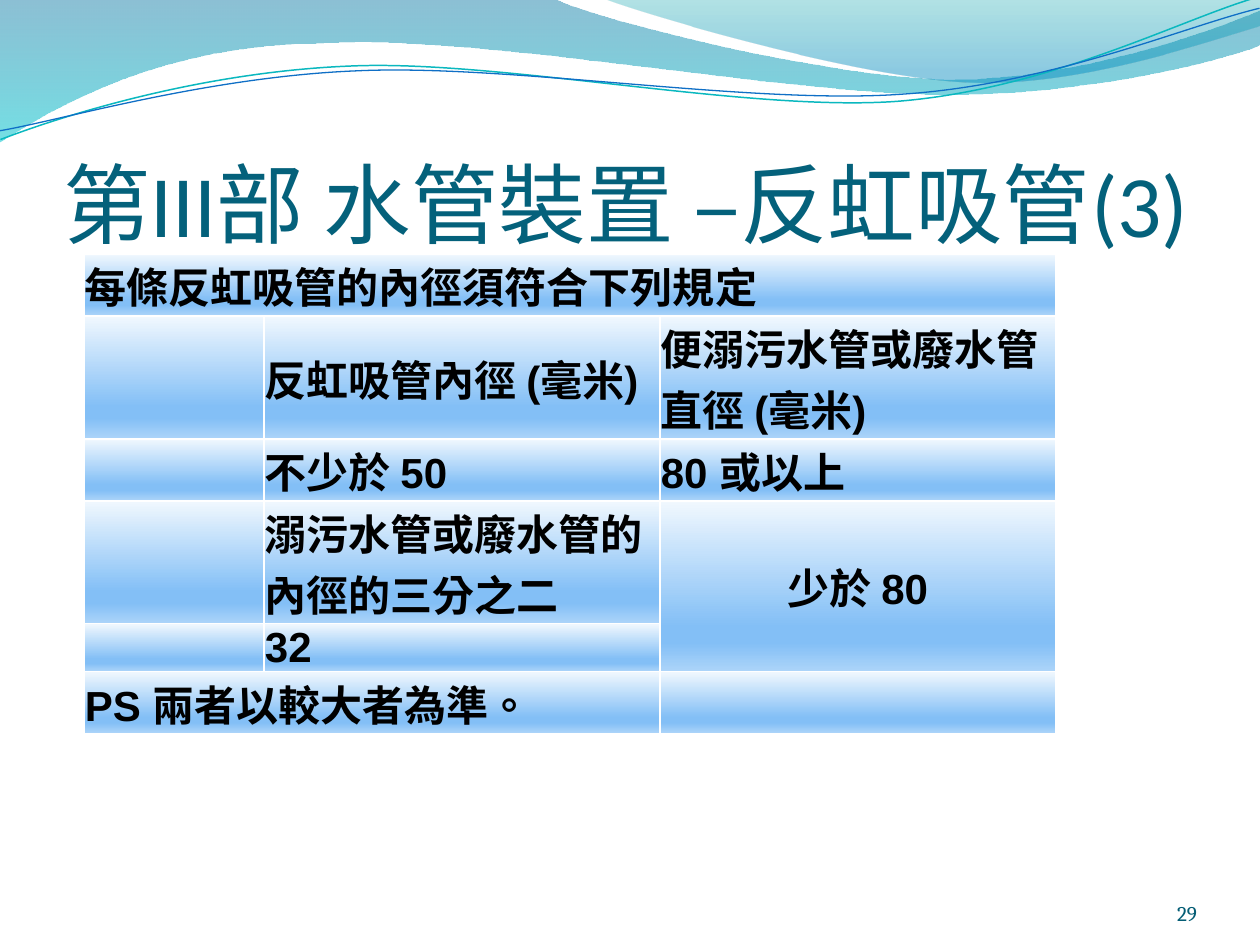
from lxml import etree
from pptx import Presentation, util as u
from pptx.dml.color import RGBColor
from pptx.enum import lang, text
from pptx.oxml import ns

PX = 914400 // 126  # EMU in one px
WHITE = RGBColor(0xFF, 0xFF, 0xFF)
BLACK = RGBColor(0, 0, 0)
TITLE_BLUE = RGBColor(0x04, 0x61, 0x7B)
NUMBER_BLUE = RGBColor(0x04, 0x5D, 0x75)
TEAL = RGBColor(0x0A, 0xB8, 0xBF)
BLUE = RGBColor(0x0F, 0x6F, 0xC6)
DEEP_BLUE = RGBColor(0x00, 0x74, 0xA1)
AQUA = RGBColor(0x00, 0xC6, 0xCF)
SEA_GREEN = RGBColor(0x00, 0xA1, 0xA9)
SEA_BLUE = RGBColor(0x00, 0x8B, 0xBF)
CELL_LIGHT = RGBColor(0xF1, 0xF8, 0xFE)
CELL_MID = RGBColor(0x83, 0xBF, 0xF6)
CELL_END = RGBColor(0xAC, 0xD4, 0xF9)


def add_gradient(parent, stops):
    """Add a top-to-bottom gradient; a stop is (position %, colour, opacity %)."""
    gradient = etree.SubElement(parent, ns.qn("a:gradFill"))
    stop_list = etree.SubElement(gradient, ns.qn("a:gsLst"))
    for position, colour, opacity in stops:
        stop = etree.SubElement(stop_list, ns.qn("a:gs"), pos=str(position * 1000))
        tint = etree.SubElement(stop, ns.qn("a:srgbClr"), val=str(colour))
        if opacity < 100:
            etree.SubElement(tint, ns.qn("a:alpha"), val=str(opacity * 1000))
    etree.SubElement(gradient, ns.qn("a:lin"), ang="5400000", scaled="0")


def add_outline(page, start, segments, close):
    """Draw segments of one point (straight) or three points (cubic curve)."""
    builder = page.shapes.build_freeform(start[0] * PX, start[1] * PX)
    builder.add_line_segments([(x * PX, y * PX) for segment in segments for x, y in segment],
                              close=close)
    shape = builder.convert_to_shape()
    shape.shadow.inherit = False
    # Join each three straight steps of a curve into one cubic step
    steps = iter(list(shape._element.spPr.iter(ns.qn("a:lnTo"))))
    for segment in segments:
        parts = [next(steps) for _ in segment]
        if len(parts) == 3:
            cubic = etree.Element(ns.qn("a:cubicBezTo"))
            parts[0].addprevious(cubic)
            for part in parts:
                cubic.append(part[0])
                part.getparent().remove(part)
    return shape


deck = Presentation()
deck.slide_width, deck.slide_height = u.Inches(10), u.Inches(7.5)
page = deck.slides.add_slide(deck.slide_layouts[5])

# Wave bands across the top
waves = [
    ((0, -1), [
        ((554, -1),),
        ((600, 21), (837, 79), (955, 79)),
        ((1075, 79), (1207, 33), (1260, 11)),
        ((1261, 45),),
        ((1239, 55), (1096, 96), (940, 94)),
        ((784, 94), (481, 35), (324, 43)),
        ((163, 44), (58, 105), (-1, 142)),
    ], [(0, DEEP_BLUE, 45), (100, AQUA, 55)]),
    ((604, -1), [
        ((641, 14), (859, 78), (969, 82)),
        ((1079, 87), (1211, 40), (1260, 26)),
        ((1260, 0),),
    ], [(0, SEA_GREEN, 30), (80, SEA_BLUE, 45)]),
]
for start, segments, stops in waves:
    wave = add_outline(page, start, segments, True)
    effects = wave._element.spPr.find(ns.qn("a:effectLst"))
    add_gradient(wave._element.spPr, stops)
    wave._element.spPr.append(effects)
    wave.line.fill.background()

# Thin curves over the bands, slightly turned
curves = [
    ((-2, 110), [
        ((58, 90), (199, 52), (350, 53)),
        ((499, 53), (745, 118), (896, 114)),
        ((1049, 109), (1184, 45), (1260, 27)),
    ], TEAL, 0.85),
    ((-2, 101), [
        ((57, 94), (207, 57), (357, 58)),
        ((509, 58), (750, 111), (902, 107)),
        ((1052, 104), (1188, 52), (1262, 38)),
    ], BLUE, 0.75),
]
for start, segments, colour, width in curves:
    curve = add_outline(page, start, segments, False)
    curve.rotation = 357.3
    curve.fill.background()
    curve.line.color.rgb = colour
    curve.line.width = u.Pt(width)

# Title, in front of the waves
title = page.shapes.title
page.shapes._spTree.append(title._element)
title.left, title.top, title.width, title.height = 63 * PX, 97 * PX, 1134 * PX, 158 * PX

# Pipe diameter table
rows = [
    ["每條反虹吸管的內徑須符合下列規定", "", ""],
    ["", "反虹吸管內徑 (毫米)", "便溺污水管或廢水管直徑 (毫米)"],
    ["", "不少於 50", "80 或以上"],
    ["", "溺污水管或廢水管的內徑的三分之二", "少於 80"],
    ["", "32", ""],
    ["PS 兩者以較大者為準。", "", ""],
]
column_widths = [180, 396, 396]
row_heights = [29, 58, 29, 58, 29, 29]  # rows grow to fit their text
cell_stops = [(0, CELL_LIGHT, 100), (74, CELL_MID, 100), (83, CELL_MID, 100), (100, CELL_END, 100)]
table_frame = page.shapes.add_table(len(rows), len(column_widths), 84 * PX, 254 * PX,
                                    sum(column_widths) * PX, sum(row_heights) * PX)
table = table_frame.table
for column, width in zip(table.columns, column_widths):
    column.width = width * PX
for row, height in zip(table.rows, row_heights):
    row.height = height * PX
table_frame.height = 411 * PX
for first, last in [((0, 0), (0, 2)), ((3, 2), (4, 2)), ((5, 0), (5, 1))]:
    table.cell(*first).merge(table.cell(*last))

for r, row in enumerate(rows):
    for c, words in enumerate(row):
        cell = table.cell(r, c)
        cell.vertical_anchor = text.MSO_ANCHOR.MIDDLE
        cell.margin_left = cell.margin_right = cell.margin_top = PX
        cell.margin_bottom = 0
        properties = cell._tc.get_or_add_tcPr()
        for side in ("lnL", "lnR", "lnT", "lnB"):
            border = etree.SubElement(properties, ns.qn("a:" + side), w=str(u.Pt(1)))
            solid = etree.SubElement(border, ns.qn("a:solidFill"))
            etree.SubElement(solid, ns.qn("a:srgbClr"), val=str(WHITE))
        add_gradient(properties, cell_stops)
        if words:
            para = cell.text_frame.paragraphs[0]
            centred = cell.is_merge_origin and cell.span_height > 1
            para.alignment = text.PP_ALIGN.CENTER if centred else text.PP_ALIGN.LEFT
            span = para.add_run()
            span.text = words
            span.font.size, span.font.name, span.font.bold = u.Pt(24), "Arial", True
            span.font.color.rgb = BLACK
            span.font.language_id = lang.MSO_LANGUAGE_ID.TRADITIONAL_CHINESE

# Title and page number text
number = page.shapes.add_textbox(1092 * PX, 876 * PX, 105 * PX, 50 * PX)
labels = [
    (title, "第III部 水管裝置 –反虹吸管(3)", 50, "Calibri", TITLE_BLUE, text.PP_ALIGN.LEFT, 6),
    (number, "29", 12, "Cambria", NUMBER_BLUE, text.PP_ALIGN.RIGHT, 0),
]
for box, words, size, font, colour, align, top_inset in labels:
    frame = box.text_frame
    frame.word_wrap = True
    frame.auto_size = text.MSO_AUTO_SIZE.NONE
    frame.vertical_anchor = text.MSO_ANCHOR.BOTTOM
    frame.margin_left = frame.margin_right = frame.margin_bottom = 0
    frame.margin_top = top_inset * PX
    para = frame.paragraphs[0]
    para.alignment = align
    span = para.add_run()
    span.text = words
    span.font.size, span.font.name = u.Pt(size), font
    span.font.color.rgb = colour

deck.save("out.pptx")
